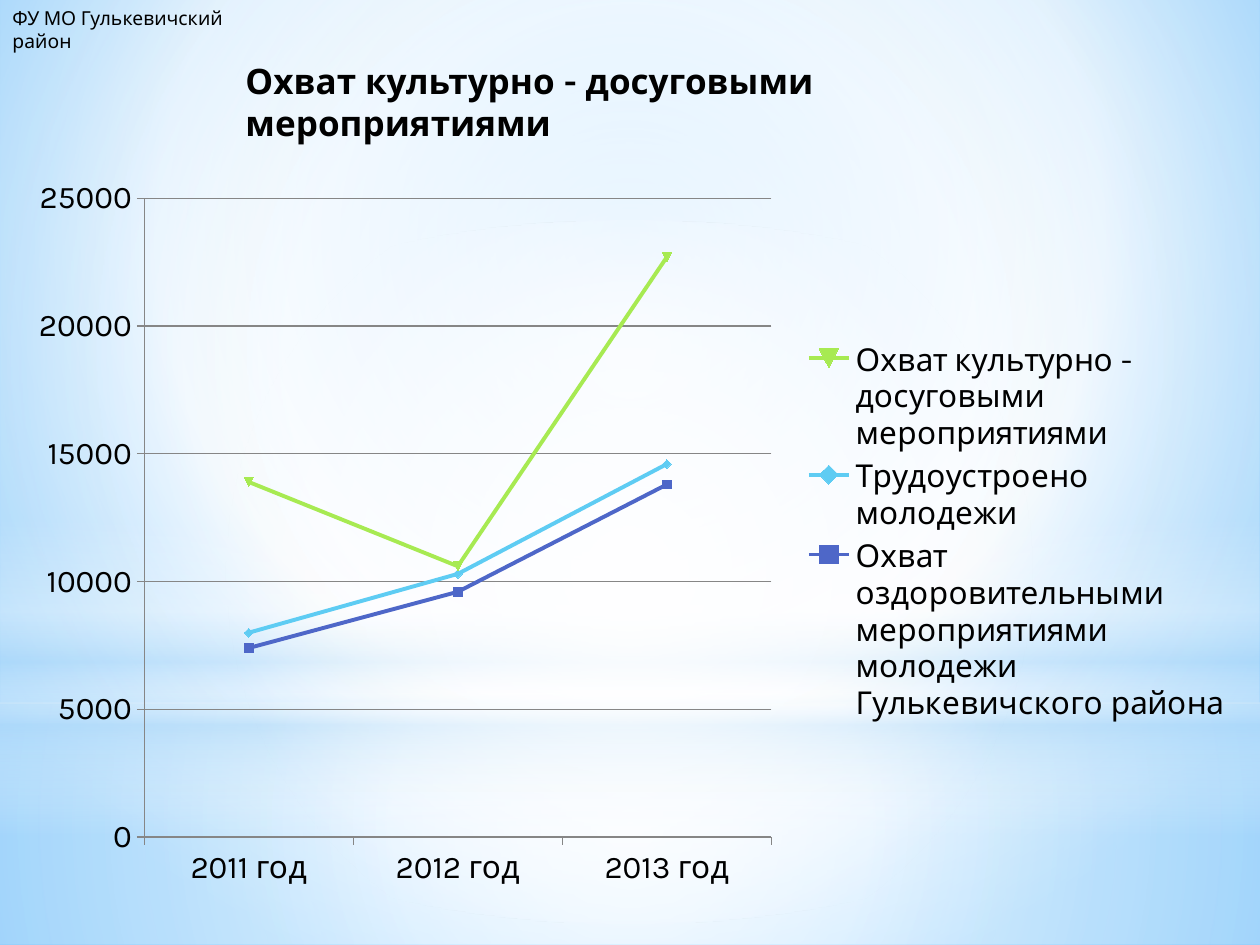
from dataclasses import dataclass
from typing import Optional

import lxml.etree
import pptx
import pptx.chart.data
import pptx.dml.color
import pptx.enum.chart
import pptx.enum.shapes
import pptx.oxml.ns
import pptx.util

RGB = pptx.dml.color.RGBColor
BLACK = RGB(0x00, 0x00, 0x00)
WHITE = RGB(0xFF, 0xFF, 0xFF)
PALE_BLUE = RGB(0xB4, 0xDC, 0xFA)
SKY = RGB(0x9E, 0xD5, 0xFF)
DEEP_SKY = RGB(0x5B, 0xB9, 0xFF)
INDIGO = RGB(0x4E, 0x67, 0xC8)
CYAN = RGB(0x5E, 0xCC, 0xF3)
LIME = RGB(0xA7, 0xEA, 0x52)
GRAY = RGB(0x86, 0x86, 0x86)
FONT = "Karla"
WIDTH = pptx.util.Inches(10)
HEIGHT = pptx.util.Inches(7.5)
CENTER = (50, 50, 50, 50)
RECT = pptx.enum.shapes.MSO_SHAPE.RECTANGLE
OVAL = pptx.enum.shapes.MSO_SHAPE.OVAL


@dataclass(frozen=True)
class Stop:
    position: int
    color: RGB
    opacity: int = 100


@dataclass(frozen=True)
class Glow:
    kind: int
    top: float
    height: float
    stops: tuple[Stop, ...]
    focus: Optional[tuple[int, ...]] = CENTER


@dataclass(frozen=True)
class Series:
    name: str
    values: tuple[int, ...]
    color: RGB


BACKDROP = (Stop(0, SKY), Stop(60, WHITE), Stop(100, DEEP_SKY))
GLOWS = (
    Glow(RECT, 0.744, 0.256,
         (Stop(0, WHITE, 91), Stop(37, WHITE, 76), Stop(100, PALE_BLUE, 79))),
    Glow(RECT, 0, 0.744,
         (Stop(0, WHITE, 89), Stop(48, WHITE, 62), Stop(100, PALE_BLUE, 79))),
    Glow(RECT, 0.55, 0.333,
         (Stop(0, WHITE, 0), Stop(29, WHITE, 30), Stop(45, PALE_BLUE, 40),
          Stop(55, WHITE, 26), Stop(65, PALE_BLUE, 60), Stop(100, WHITE, 0)),
         None),
    Glow(OVAL, 0.233, 0.744, (Stop(0, WHITE), Stop(56, WHITE, 0))),
)
YEARS = ("2011 год", "2012 год", "2013 год")
SERIES = (
    Series("Охват оздоровительными мероприятиями молодежи Гулькевичского района",
           (7400, 9600, 13800), INDIGO),
    Series("Трудоустроено молодежи", (600, 700, 800), CYAN),
    Series("Охват культурно - досуговыми мероприятиями", (5900, 300, 8100), LIME),
)


def add(parent, tag: str, **attrs):
    return lxml.etree.SubElement(
        parent, pptx.oxml.ns.qn(tag), {k: str(v) for k, v in attrs.items()})


def box(left: float, top: float, width: float, height: float) -> tuple[int, ...]:
    return (int(left * WIDTH), int(top * HEIGHT),
            int(width * WIDTH), int(height * HEIGHT))


def paint_gradient(owner, fill, stops, focus) -> None:
    fill.gradient()
    grad = owner.xpath(".//a:gradFill")[0]
    for child in list(grad):
        grad.remove(child)
    stop_list = add(grad, "a:gsLst")
    for stop in stops:
        gs = add(stop_list, "a:gs", pos=stop.position * 1000)
        color = add(gs, "a:srgbClr", val=stop.color)
        if stop.opacity < 100:
            add(color, "a:alpha", val=stop.opacity * 1000)
    if focus is None:
        add(grad, "a:lin", ang=90 * 60000, scaled=0)
    else:
        path = add(grad, "a:path", path="circle")
        add(path, "a:fillToRect",
            **{side: share * 1000 for side, share in zip("ltrb", focus)})


def add_glow(s, glow: Glow) -> None:
    sp = s.shapes.add_shape(glow.kind, *box(0, glow.top, 1, glow.height))
    sp.shadow.inherit = False
    sp.line.fill.background()
    paint_gradient(sp.element, sp.fill, glow.stops, glow.focus)


def add_text(s, text: str, *, at: tuple[int, ...], size: float,
             bold: bool = False) -> None:
    tf = s.shapes.add_textbox(*at).text_frame
    tf.word_wrap = True
    r = tf.paragraphs[0].add_run()
    r.text = text
    r.font.name = FONT
    r.font.size = pptx.util.Pt(size)
    r.font.bold = bold
    r.font.color.rgb = BLACK


def style_line(line, color: RGB, width: float) -> None:
    line.color.rgb = color
    line.width = pptx.util.Pt(width)


def place_plot(chart, **shares: float) -> None:
    plot_area = chart.element.xpath(".//c:plotArea")[0]
    for old in plot_area.xpath("./c:layout"):
        plot_area.remove(old)
    layout = add(plot_area, "c:layout")
    plot_area.insert(0, layout)
    manual = add(layout, "c:manualLayout")
    add(manual, "c:layoutTarget", val="inner")
    for mode in ("xMode", "yMode"):
        add(manual, f"c:{mode}", val="edge")
    for name, share in shares.items():
        add(manual, f"c:{name}", val=share)


def add_coverage_chart(s) -> None:
    data = pptx.chart.data.CategoryChartData()
    data.categories = YEARS
    for series in SERIES:
        data.add_series(series.name, series.values)
    chart = s.shapes.add_chart(
        pptx.enum.chart.XL_CHART_TYPE.LINE_MARKERS_STACKED,
        *box(0.012, 0.175, 0.976, 0.777), data).chart
    chart.has_title = False
    chart.font.name = FONT
    chart.font.size = pptx.util.Pt(18)
    chart.font.color.rgb = BLACK
    chart.has_legend = True
    chart.legend.position = pptx.enum.chart.XL_LEGEND_POSITION.RIGHT
    chart.legend.include_in_layout = False
    for axis in (chart.category_axis, chart.value_axis):
        axis.major_tick_mark = pptx.enum.chart.XL_TICK_MARK.OUTSIDE
        axis.minor_tick_mark = pptx.enum.chart.XL_TICK_MARK.NONE
        style_line(axis.format.line, GRAY, 0.75)
    axis = chart.value_axis
    axis.minimum_scale, axis.maximum_scale, axis.major_unit = 0, 25000, 5000
    axis.has_major_gridlines = True
    style_line(axis.major_gridlines.format.line, GRAY, 0.75)
    plot = chart.plots[0]
    plot.vary_by_categories = False
    for line, series in zip(plot.series, SERIES):
        line.smooth = False
        style_line(line.format.line, series.color, 2.25)
        marker = line.marker.format
        marker.fill.solid()
        marker.fill.fore_color.rgb = series.color
        style_line(marker.line, series.color, 0.75)
    place_plot(chart, x=0.105, y=0.045, w=0.51, h=0.87)


def main() -> None:
    prs = pptx.Presentation()
    prs.slide_width, prs.slide_height = WIDTH, HEIGHT
    s = prs.slides.add_slide(prs.slide_layouts[6])
    paint_gradient(s.element, s.background.fill, BACKDROP, (20, 10, 20, 60))
    for glow in GLOWS:
        add_glow(s, glow)
    add_coverage_chart(s)
    add_text(s, "Охват культурно - досуговыми мероприятиями",
             at=box(0.185, 0.056, 0.667, 0.059), size=20, bold=True)
    add_text(s, "ФУ МО Гулькевичский район",
             at=box(0, 0, 0.225, 0.039), size=11)
    prs.save("out.pptx")


if __name__ == "__main__":
    main()
